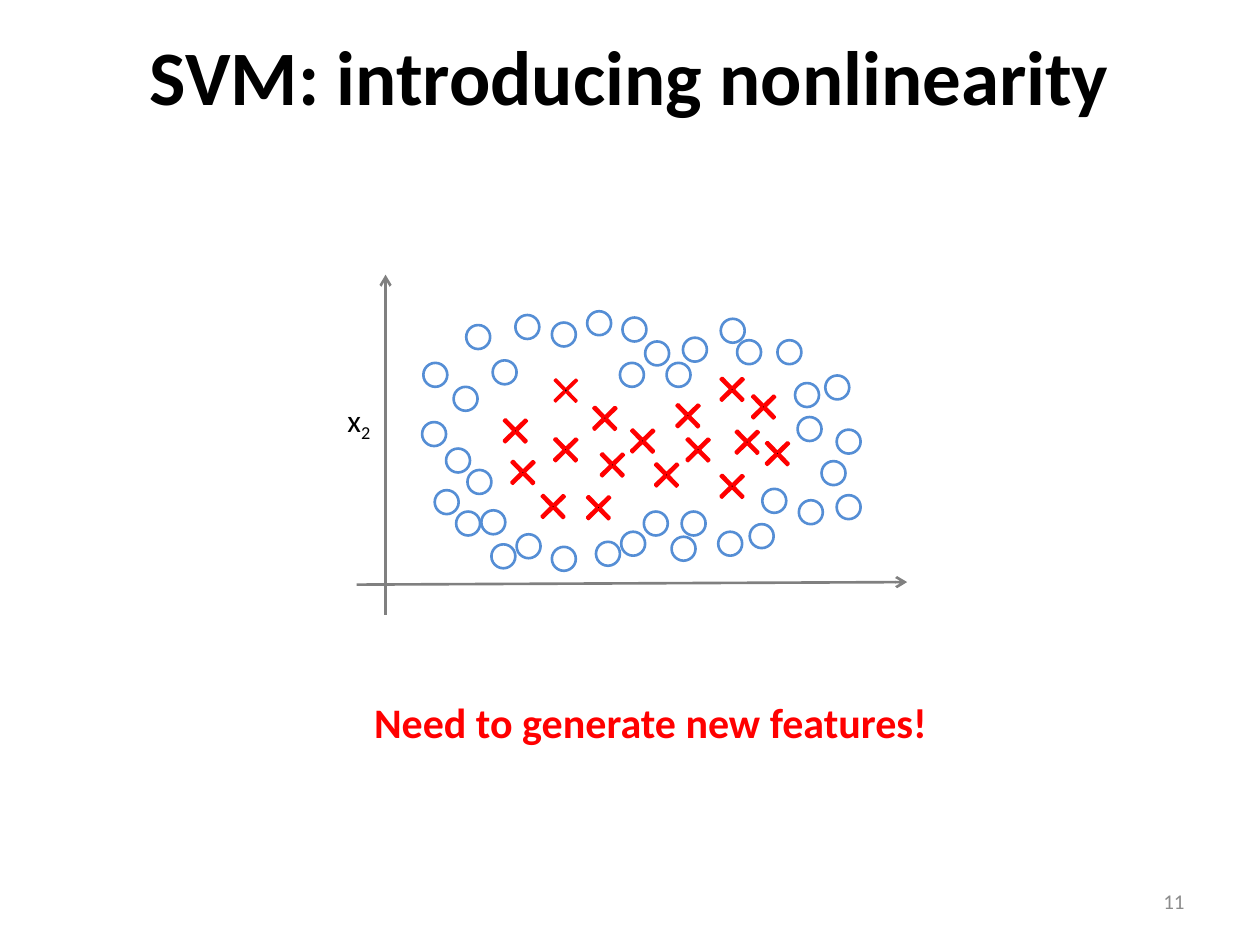
"""Build the slide that introduces nonlinearity for SVMs."""
from dataclasses import dataclass

from lxml import etree
from pptx import Presentation
from pptx.dml.color import RGBColor
from pptx.enum import shapes, text
from pptx.oxml import ns
from pptx.util import Inches, Pt

BLUE, RED, GRAY, BLACK = "558ED5", "FF0000", "808080", "000000"


@dataclass
class Marker:
    left: float
    top: float
    weight: float = 1.5


@dataclass
class Axis:
    start: tuple[float, float]
    end: tuple[float, float]


@dataclass
class Label:
    box: tuple[float, float, float, float]
    words: str
    style: dict
    wrap: bool = True
    align: text.PP_ALIGN = text.PP_ALIGN.LEFT
    anchor: text.MSO_ANCHOR = text.MSO_ANCHOR.TOP
    subscript: str = ""


CIRCLES = [Marker(*at) for at in [
    (5.12, 2.71), (4.94, 2.52), (6.17, 2.7), (3.7, 2.58), (5.11, 4.06),
    (3.35, 3.35), (3.82, 4.05), (6.31, 3.04), (5.42, 2.68), (5.85, 2.7),
    (4.09, 2.5), (4.66, 2.47), (4.92, 2.88), (5.41, 4.06), (3.54, 3.56),
    (3.6, 3.07), (3.36, 2.88), (4.38, 4.34), (3.91, 2.86), (4.38, 2.56),
    (6.05, 3.88), (5.72, 2.53), (3.45, 3.89), (3.9, 4.32), (3.71, 3.73),
    (3.62, 4.06), (5.7, 4.22), (5.29, 2.88), (4.73, 4.3), (6.64, 3.41),
    (6.34, 3.97), (5.33, 4.26), (6.55, 2.98), (5.95, 4.16), (6.64, 3.93),
    (6.33, 3.31), (6.52, 3.66), (4.1, 4.24), (4.93, 4.22),
]]
CROSSES = [Marker(*at) for at in [
    (4.37, 3.45), (4.63, 3.91), (4.27, 3.9), (5.81, 3.39), (4.74, 3.57),
    (4.68, 3.2), (4.98, 3.38), (5.34, 3.18), (3.97, 3.3), (4.03, 3.63),
    (4.37, 2.98, 1), (5.69, 2.97), (5.42, 3.45), (5.94, 3.11),
    (5.17, 3.65), (5.69, 3.74), (6.05, 3.48),
]]
AXES = [Axis((3.06, 4.88), (3.06, 2.18)), Axis((2.83, 4.64), (7.2, 4.62))]

TITLE = Label((0, -0.03, 10, 1.24), "SVM: introducing nonlinearity",
              {"size": Pt(44), "bold": True}, align=text.PP_ALIGN.CENTER,
              anchor=text.MSO_ANCHOR.MIDDLE)
AXIS_NAME = Label((2.66, 3.13, 0.4, 0.4), "x", {"size": Pt(18)}, wrap=False,
                  subscript="2")
NUMBER = Label((7.17, 6.95, 2.33, 0.4), "11",
               {"size": Pt(12), "color": "8C8C8C"}, align=text.PP_ALIGN.RIGHT,
               anchor=text.MSO_ANCHOR.MIDDLE)
MESSAGE = Label((2.87, 5.48, 7.32, 0.5), "Need to generate new features!",
                {"size": Pt(24), "bold": True, "color": RED})


def rgb(value: str) -> RGBColor:
    """Turn a hex string into a colour."""
    return RGBColor.from_string(value)


def add_run(p, words: str, style: dict):
    """Add a run with the given font values."""
    r = p.add_run()
    r.text = words
    for name, value in {"name": "Calibri", "color": BLACK, **style}.items():
        if name == "color":
            r.font.color.rgb = rgb(value)
        else:
            setattr(r.font, name, value)
    return r


def write_label(s, label: Label) -> None:
    """Place a shape and fill it with the label's text."""
    for name, value in zip(("left", "top", "width", "height"), label.box):
        setattr(s, name, Inches(value))
    tf = s.text_frame
    tf.word_wrap = label.wrap
    tf.vertical_anchor = label.anchor
    p = tf.paragraphs[0]
    p.alignment = label.align
    add_run(p, label.words, label.style)
    if label.subscript:
        r = add_run(p, label.subscript, label.style)
        r.font._element.set("baseline", "-25000")


def add_label(parent, label: Label) -> None:
    """Add a text box for a label."""
    write_label(parent.add_textbox(*map(Inches, label.box)), label)


def add_marker(parent, marker: Marker, kind, size: float, color: str):
    """Add an outlined data point."""
    s = parent.add_shape(kind, Inches(marker.left), Inches(marker.top),
                         Inches(size), Inches(size))
    s.shadow.inherit = False
    s.fill.background()
    s.line.color.rgb = rgb(color)
    s.line.width = Pt(marker.weight)
    return s


def add_cross(parent, marker: Marker) -> None:
    """Add a data point drawn as a turned plus sign."""
    s = add_marker(parent, marker, shapes.MSO_SHAPE.CROSS, 0.24, RED)
    s.adjustments[0] = 0.466
    s.rotation = 45.6
    s.fill.solid()
    s.fill.fore_color.rgb = rgb(BLACK)


def add_axis(parent, axis: Axis) -> None:
    """Add an axis line with an arrowhead at its end."""
    s = parent.add_connector(shapes.MSO_CONNECTOR.STRAIGHT,
                             *map(Inches, axis.start + axis.end))
    s.line.color.rgb = rgb(GRAY)
    s.line.width = Pt(1.5)
    etree.SubElement(s.line._get_or_add_ln(), ns.qn("a:tailEnd"), type="arrow")
    etree.SubElement(s._element.spPr, ns.qn("a:effectLst"))


def main() -> None:
    """Build and save the presentation."""
    prs = Presentation()
    prs.slide_width, prs.slide_height = Inches(10), Inches(7.5)
    slide = prs.slides.add_slide(prs.slide_layouts.get_by_name("Title Only"))
    write_label(slide.shapes.title, TITLE)
    plot = slide.shapes.add_group_shape().shapes
    for circle in CIRCLES:
        add_marker(plot, circle, shapes.MSO_SHAPE.OVAL, 0.19, BLUE)
    for cross in CROSSES:
        add_cross(plot, cross)
    add_label(plot, AXIS_NAME)
    for axis in AXES:
        add_axis(plot, axis)
    for label in (NUMBER, MESSAGE):
        add_label(slide.shapes, label)
    prs.save("out.pptx")


if __name__ == "__main__":
    main()
